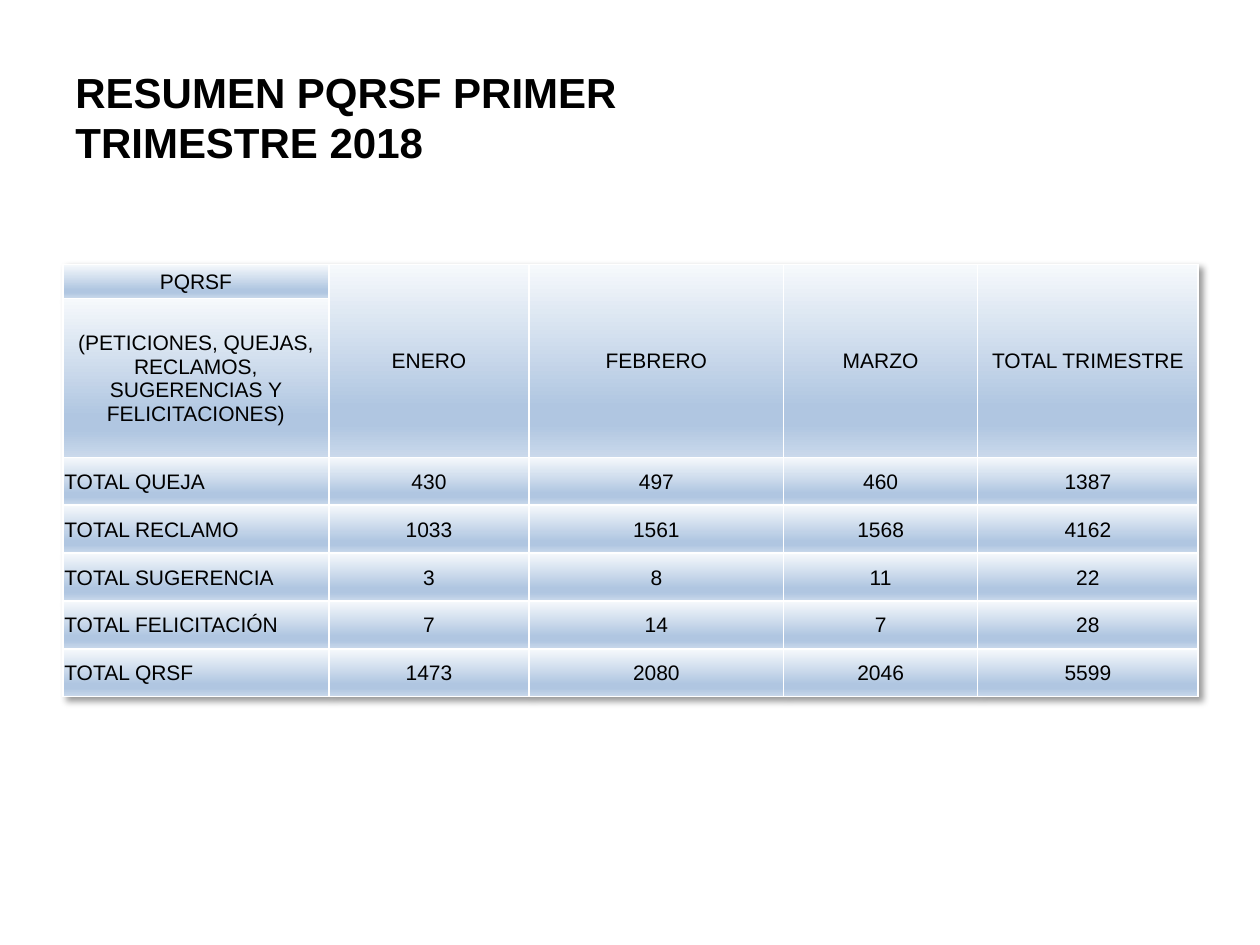
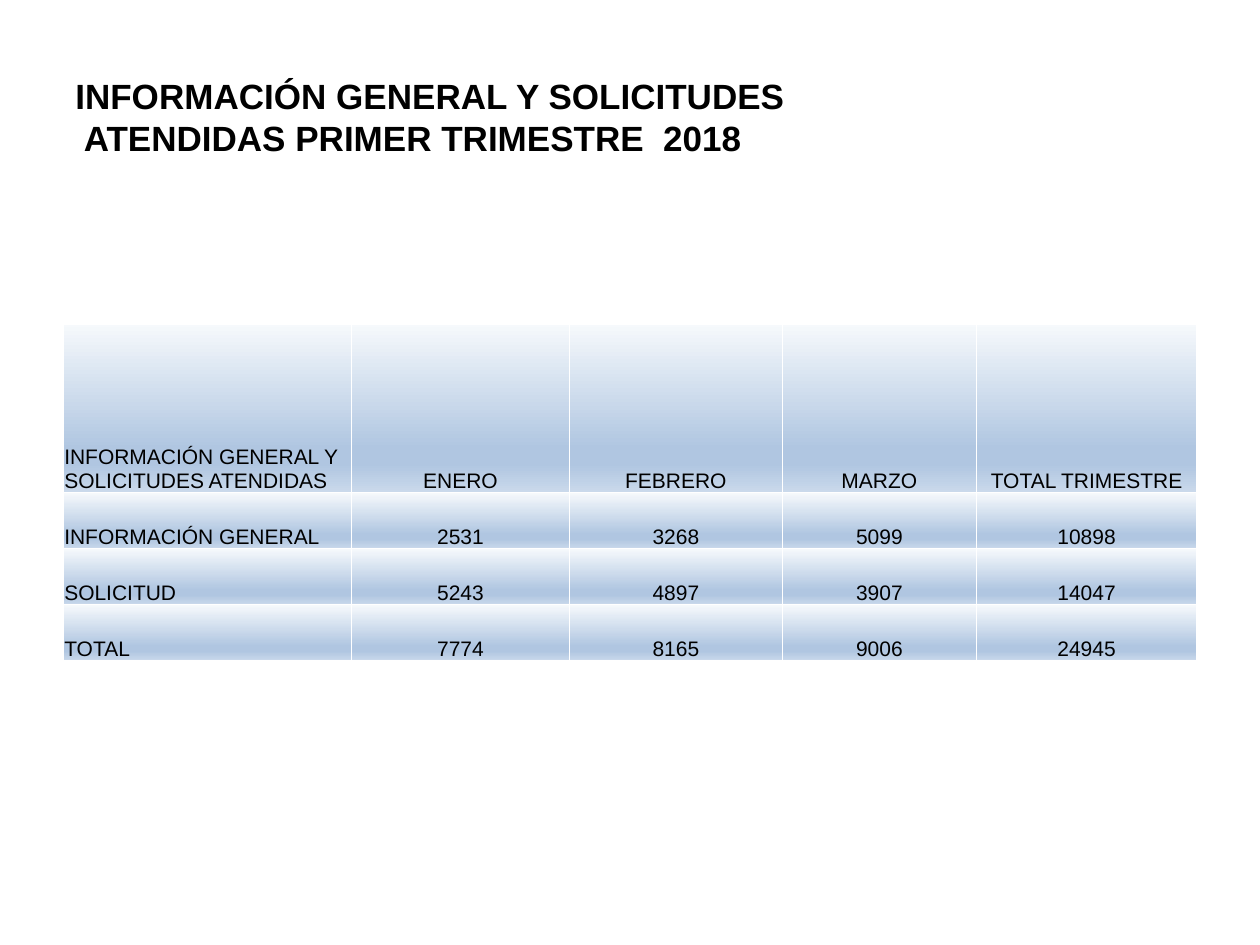
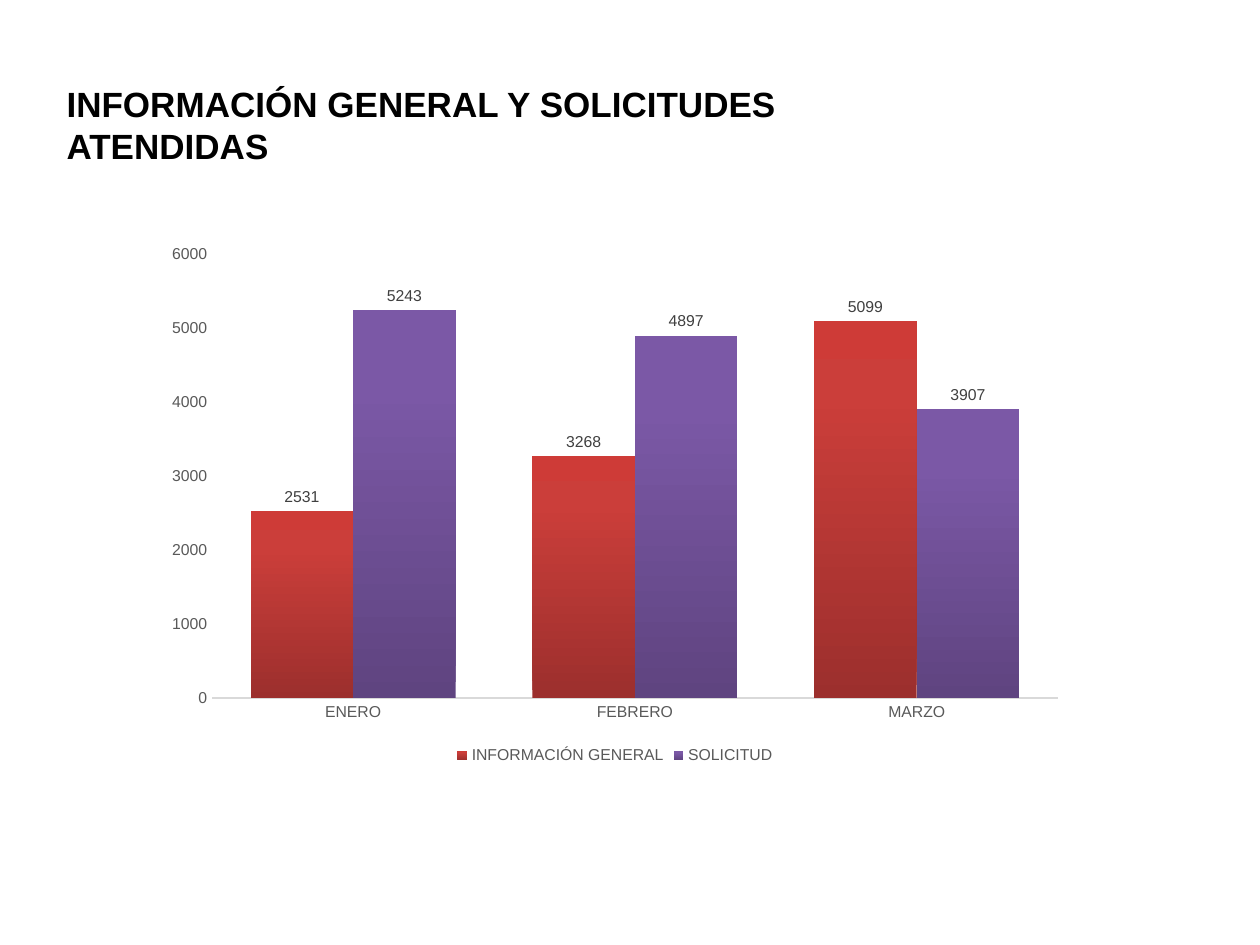
"""Build the quarterly PQRSF report: two summary tables and a column chart."""
import pptx
import pptx.chart.data
import pptx.dml.color
import pptx.enum.chart
import pptx.enum.text
import pptx.oxml
import pptx.oxml.ns
import pptx.util

RGB = pptx.dml.color.RGBColor
BLACK = RGB(0x00, 0x00, 0x00)
WHITE = RGB(0xFF, 0xFF, 0xFF)
AXIS_TEXT = RGB(0x59, 0x59, 0x59)
LABEL_TEXT = RGB(0x40, 0x40, 0x40)
AXIS_LINE = RGB(0xD9, 0xD9, 0xD9)
CELL_STOPS = [(0, RGB(0xF6, 0xF9, 0xFC)), (74, RGB(0xB0, 0xC6, 0xE1)),
              (83, RGB(0xB0, 0xC6, 0xE1)), (100, RGB(0xCA, 0xD9, 0xEB))]
RED_STOPS = [(0, RGB(0x9C, 0x2F, 0x2D)), (80, RGB(0xCB, 0x3E, 0x3A)),
             (100, RGB(0xCE, 0x3B, 0x37))]
PURPLE_STOPS = [(0, RGB(0x5F, 0x44, 0x80)), (80, RGB(0x7B, 0x58, 0xA6)),
                (100, RGB(0x7C, 0x57, 0xA8))]

PT = pptx.util.Pt
ALIGN = pptx.enum.text.PP_ALIGN
ANCHOR = pptx.enum.text.MSO_ANCHOR
CHART = pptx.enum.chart
MARGINS = dict.fromkeys(("margin_left", "margin_right", "margin_top"), PT(0.75))
TABLE_FLAGS = {"first_row": False, "horz_banding": False}

MONTHS = ["ENERO", "FEBRERO", "MARZO"]
QUARTER = MONTHS + ["TOTAL TRIMESTRE"]
GENERAL = [2531, 3268, 5099]
REQUESTS = [5243, 4897, 3907]


def assign(target, formats):
    """Set every attribute in a dict of format values."""
    for attribute, value in formats.items():
        setattr(target, attribute, value)


def add_xml(parent, markup, position=None):
    """Insert a DrawingML fragment into an element."""
    tag, rest = markup.split(" ", 1)
    element = pptx.oxml.parse_xml(f"{tag} {pptx.oxml.ns.nsdecls('a')} {rest}")
    parent.insert(len(parent) if position is None else position, element)


def add_gradient(parent, stops, angle):
    """Add a linear gradient fill to a properties element."""
    marks = "".join(f'<a:gs pos="{share * 1000}"><a:srgbClr val="{color}"/></a:gs>'
                    for share, color in stops)
    add_xml(parent, f'<a:gradFill rotWithShape="1"><a:gsLst>{marks}</a:gsLst>'
                    f'<a:lin ang="{angle * 60000}" scaled="0"/></a:gradFill>')


def total_row(label, months):
    """Return a table row closed by the sum of its months."""
    return [label, *months, sum(months)]


class Report:
    """Hold the report's style, its grid and the current slide."""

    COLUMNS, ROWS = 20, 15
    FONT = "Arial"

    def __init__(self):
        """Start an empty deck on a 20 by 15 grid."""
        self.deck = pptx.Presentation()
        self.deck.slide_width = pptx.util.Inches(10)
        self.deck.slide_height = pptx.util.Inches(7.5)
        self.slide = None

    def across(self, columns):
        """Convert grid columns to a length."""
        return round(self.deck.slide_width * columns / self.COLUMNS)

    def down(self, rows):
        """Convert grid rows to a length."""
        return round(self.deck.slide_height * rows / self.ROWS)

    def frame(self, left, top, width, height):
        """Convert a grid rectangle to lengths."""
        return self.across(left), self.down(top), self.across(width), self.down(height)

    def style(self, font, size, color=BLACK, bold=False):
        """Format a font in the report's typeface."""
        assign(font, {"name": self.FONT, "size": PT(size), "bold": bold})
        font.color.rgb = color

    def title(self, text, size, left=1, top=0.6, width=18):
        """Open a new slide under a bold heading."""
        self.slide = self.deck.slides.add_slide(self.deck.slide_layouts[6])
        heading = self.slide.shapes.add_textbox(*self.frame(left, top, width, 2.5)).text_frame
        assign(heading, {"word_wrap": True, "vertical_anchor": ANCHOR.MIDDLE, "text": text})
        for run in heading.paragraphs[0].runs:
            self.style(run.font, size, bold=True)

    def cell(self, cell, text, anchor, align):
        """Fill one table cell with text, borders and gradient."""
        assign(cell, {**MARGINS, "margin_bottom": 0, "vertical_anchor": anchor,
                      "text": str(text)})
        paragraph = cell.text_frame.paragraphs[0]
        paragraph.alignment = align
        for run in paragraph.runs:
            self.style(run.font, 12)
        properties = cell._tc.get_or_add_tcPr()
        for side in "LRTB":
            add_xml(properties, f'<a:ln{side} w="12700"><a:solidFill><a:srgbClr val="{WHITE}"/>'
                                f'</a:solidFill></a:ln{side}>')
        add_gradient(properties, CELL_STOPS, 90)

    def table(self, top, widths, heights, rows, anchor, centred_rows=0):
        """Add a table whose label column is left-aligned below the centred rows."""
        frame = self.frame(1, top, sum(widths), sum(heights))
        table = self.slide.shapes.add_table(len(rows), len(widths), *frame).table
        assign(table, TABLE_FLAGS)
        for column, width in zip(table.columns, widths):
            column.width = self.across(width)
        for row, height in zip(table.rows, heights):
            row.height = self.down(height)
        for r, values in enumerate(rows):
            for c, value in enumerate(values):
                align = ALIGN.CENTER if c or r < centred_rows else ALIGN.LEFT
                self.cell(table.cell(r, c), value, anchor, align)
        return table

    def shadow(self, table):
        """Cast a soft shadow behind a table."""
        add_xml(table._tbl.tblPr,
                '<a:effectLst ><a:outerShdw blurRad="50800" dist="38100" dir="2700000" '
                'algn="tl" rotWithShape="0"><a:srgbClr val="000000"><a:alpha val="40000"/>'
                '</a:srgbClr></a:outerShdw></a:effectLst>', 0)

    def columns(self, place, categories, series):
        """Add a clustered column chart with gradient bars and value labels."""
        data = pptx.chart.data.CategoryChartData()
        data.categories = categories
        for name, values, _ in series:
            data.add_series(name, values)
        chart = self.slide.shapes.add_chart(
            CHART.XL_CHART_TYPE.COLUMN_CLUSTERED, *self.frame(*place), data).chart
        assign(chart, {"has_title": False, "has_legend": True})
        self.style(chart.font, 10)
        assign(chart.legend, {"position": CHART.XL_LEGEND_POSITION.BOTTOM,
                              "include_in_layout": False})
        self.style(chart.legend.font, 9, AXIS_TEXT)
        for axis in (chart.category_axis, chart.value_axis):
            assign(axis, {"major_tick_mark": CHART.XL_TICK_MARK.NONE,
                          "minor_tick_mark": CHART.XL_TICK_MARK.NONE,
                          "has_major_gridlines": False})
            self.style(axis.tick_labels.font, 9, AXIS_TEXT)
        chart.category_axis.format.line.color.rgb = AXIS_LINE
        chart.category_axis.format.line.width = PT(1)
        chart.value_axis.format.line.fill.background()
        assign(chart.value_axis, {"minimum_scale": 0, "maximum_scale": 6000, "major_unit": 1000})
        plot = chart.plots[0]
        assign(plot, {"gap_width": 75, "overlap": 0, "vary_by_categories": False})
        for bars, (_, _, stops) in zip(plot.series, series):
            bars.invert_if_negative = False
            add_gradient(bars._element.get_or_add_spPr(), stops, 270)
            assign(bars.data_labels, {"show_value": True,
                                      "position": CHART.XL_LABEL_POSITION.OUTSIDE_END})
            self.style(bars.data_labels.font, 9, LABEL_TEXT)


def main():
    """Build the three slides and save them."""
    report = Report()

    report.title("RESUMEN PQRSF PRIMER \vTRIMESTRE 2018", 24, width=12.78)
    totals = [
        ["PQRSF", *QUARTER],
        ["(PETICIONES, QUEJAS, RECLAMOS, SUGERENCIAS Y FELICITACIONES)", *[""] * len(QUARTER)],
        total_row("TOTAL QUEJA", [430, 497, 460]),
        total_row("TOTAL RECLAMO", [1033, 1561, 1568]),
        total_row("TOTAL SUGERENCIA", [3, 8, 11]),
        total_row("TOTAL FELICITACIÓN", [7, 14, 7]),
        ["TOTAL QRSF", 1473, 2080, 2046, 5599],
    ]
    summary = report.table(4.2, [4.22, 3.18, 4.04, 3.08, 3.5], [0.54, 2.52] + [0.76] * 5,
                           totals, ANCHOR.MIDDLE, centred_rows=2)
    for column in range(1, len(QUARTER) + 1):
        summary.cell(0, column).merge(summary.cell(1, column))
    report.shadow(summary)

    report.title("INFORMACIÓN GENERAL Y SOLICITUDES\v ATENDIDAS PRIMER TRIMESTRE  2018", 20)
    attended = [
        ["INFORMACIÓN GENERAL Y SOLICITUDES ATENDIDAS", *QUARTER],
        total_row("INFORMACIÓN GENERAL", GENERAL),
        total_row("SOLICITUD", REQUESTS),
        total_row("TOTAL", [sum(month) for month in zip(GENERAL, REQUESTS)]),
    ]
    report.table(5.14, [4.58, 3.46, 3.38, 3.08, 3.5], [2.68] + [0.89] * 3,
                 attended, ANCHOR.BOTTOM)

    report.title("INFORMACIÓN GENERAL Y SOLICITUDES ATENDIDAS", 20, 0.86, 0.72, 13.22)
    report.columns((2.44, 3.72, 14.64, 8.5), MONTHS,
                   [("INFORMACIÓN GENERAL", GENERAL, RED_STOPS),
                    ("SOLICITUD", REQUESTS, PURPLE_STOPS)])

    report.deck.save("out.pptx")


if __name__ == "__main__":
    main()
